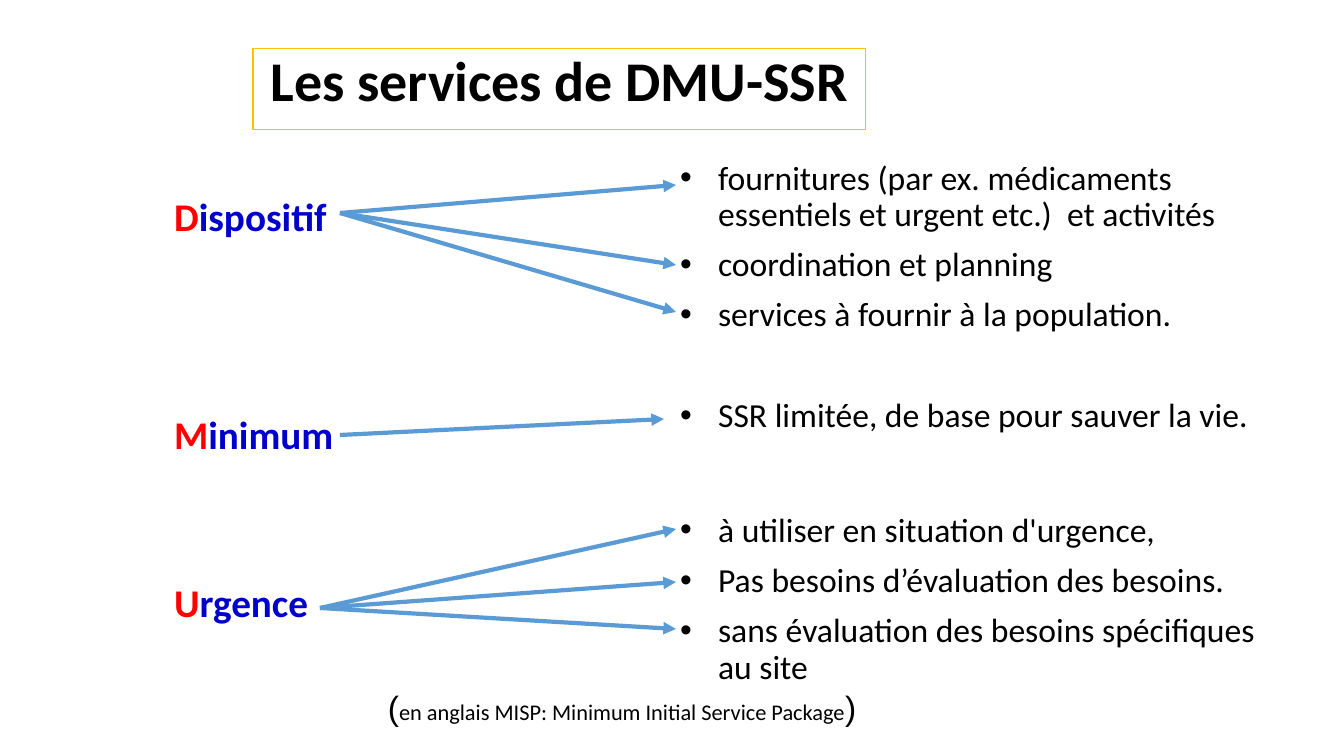
from lxml import etree
from pptx import Presentation
from pptx import util as u
from pptx.dml.color import RGBColor
from pptx.enum import shapes, text
from pptx.oxml.ns import qn

# Content
TITLE = "Les services de DMU-SSR"
# Each term: initial, rest, space before (pt), arrow start, arrow tips,
# and its details
TERMS = [
    ("D", "ispositif", 0, (340, 213), [(676, 185), (676, 265), (676, 312)],
     ["fournitures (par ex. médicaments essentiels et urgent etc.)  et activités",
      "coordination et planning",
      "services à fournir à la population."]),
    ("M", "inimum", 125, (340, 435), [(664, 419)],
     ["SSR limitée, de base pour sauver la vie."]),
    ("U", "rgence", 90, (320, 608), [(676, 529), (676, 582), (676, 629)],
     ["à utiliser en situation d'urgence,",
      "Pas besoins d’évaluation des besoins.",
      "sans évaluation des besoins spécifiques au site"]),
]
GROUP_GAPS = [10, 46, 56]  # space before each group of details, pt
NOTE = [("(", 24, "Arial"),
        ("en anglais MISP: Minimum Initial Service Package", 16, "Calibri"),
        (")", 24, "Arial")]
COLORS = {"text": "000000", "initial": "FF0000", "term": "0000CC",
          "frame": "FFC000", "arrow": "5B9BD5"}


def px(n):
    return u.Emu(round(n * 914400 / 100.8))


def color(name):
    return RGBColor.from_string(COLORS[name])


def place(sp, left, top, width, height):
    sp.left, sp.top, sp.width, sp.height = map(px, (left, top, width, height))
    tf = sp.text_frame
    tf.word_wrap = True
    tf.auto_size = text.MSO_AUTO_SIZE.NONE
    tf.vertical_anchor = text.MSO_ANCHOR.TOP
    return tf


def add_run(p, words, size, name="text", bold=False, face="Calibri"):
    r = p.add_run()
    r.text = words
    r.font.size, r.font.bold, r.font.name = u.Pt(size), bold, face
    r.font.color.rgb = color(name)


def add_item(tf, before, margin, indent, bullet):
    p = tf.paragraphs[0] if not tf.paragraphs[0].runs else tf.add_paragraph()
    p.line_spacing, p.space_before = 0.9, u.Pt(before)
    p.alignment = text.PP_ALIGN.LEFT
    pPr = p._p.get_or_add_pPr()
    pPr.set("marL", str(px(margin)))
    pPr.set("indent", str(px(indent)))
    if bullet:
        etree.SubElement(pPr, qn("a:buFont")).set("typeface", "Arial")
        etree.SubElement(pPr, qn("a:buChar")).set("char", "•")
    else:
        etree.SubElement(pPr, qn("a:buNone"))
    return p


def add_arrow(s, start, tip):
    line = s.shapes.add_connector(shapes.MSO_CONNECTOR.STRAIGHT,
                                  *map(px, start + tip))
    line.line.color.rgb = color("arrow")
    line.line.width = u.Pt(3)
    etree.SubElement(line.line._get_or_add_ln(), qn("a:tailEnd")).set("type", "triangle")
    etree.SubElement(line._element.spPr, qn("a:effectLst"))


prs = Presentation()
prs.slide_width, prs.slide_height = px(1344), px(756)
s = prs.slides.add_slide(prs.slide_layouts[3])
title, details_box, terms_box = s.placeholders

# Title
tf = place(title, 253, 48, 613, 82)
title.line.color.rgb = color("frame")
title.line.width = u.Pt(0.75)
p = tf.paragraphs[0]
p.alignment, p.line_spacing = text.PP_ALIGN.CENTER, 0.9
add_run(p, TITLE, 40, bold=True)

# Terms on the left, details on the right
details_tf = place(details_box, 664, 156, 609, 527)
terms_tf = place(terms_box, 164, 193, 238, 492)
for (initial, rest, before, _, _, details), gap in zip(TERMS, GROUP_GAPS):
    p = add_item(terms_tf, before, 25, -25, False)
    add_run(p, initial, 28, "initial", True)
    add_run(p, rest, 28, "term", True)
    for i, detail in enumerate(details):
        p = add_item(details_tf, 10 if i else gap, 44, -38, True)
        add_run(p, detail, 24)

# Note
note = s.shapes.add_textbox(0, 0, 0, 0)
p = place(note, 378, 682, 503, 50).paragraphs[0]
for words, size, face in NOTE:
    add_run(p, words, size, face=face)

# Arrows from each term to its details
for _, _, _, start, tips, _ in TERMS:
    for tip in tips:
        add_arrow(s, start, tip)

prs.save("out.pptx")
